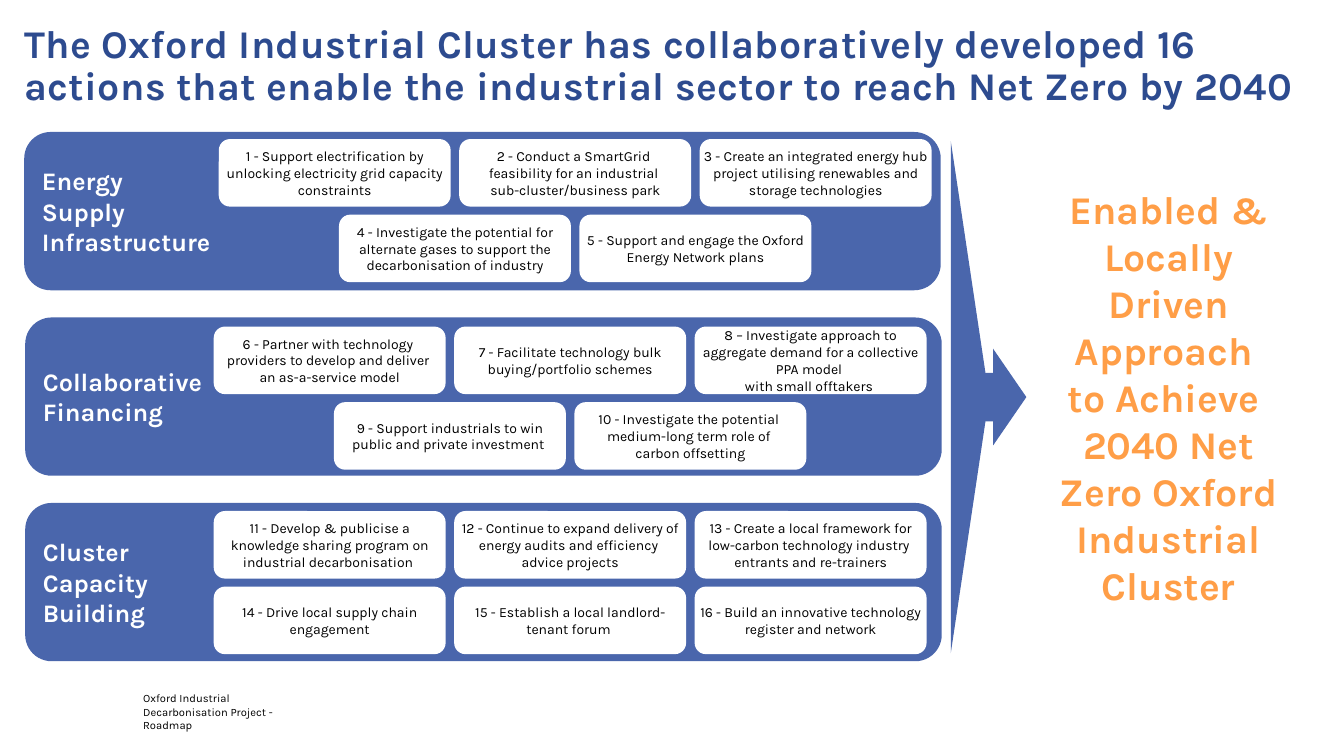
from pptx import Presentation
from pptx.dml.color import RGBColor
from pptx.enum.shapes import MSO_SHAPE
from pptx.enum.text import MSO_ANCHOR, MSO_AUTO_SIZE, PP_ALIGN
from pptx.util import Inches, Pt

HUES = {"navy": "2D4B8F", "blue": "4A66AC", "white": "FFFFFF",
        "black": "000000", "gold": "FF9E47"}

# Grid of the action cards, in inches
CARD_W, CARD_H = 2.3, 0.67
COL, ROW = 2.385, 0.75
BAND_W, BAND_H = 9.09, 1.57

# Each band: left, top, label, left and top of its cards, rows of cards
BANDS = [
    (0.24, 1.31, "Energy \nSupply \nInfrastructure", 2.17, 1.38, [
        ["1 - Support electrification by unlocking electricity grid capacity constraints",
         "2 - Conduct a SmartGrid \nfeasibility for an industrial \nsub-cluster/business park",
         "3 - Create an integrated energy hub project utilising renewables and storage technologies"],
        ["4 - Investigate the potential for alternate gases to support the decarbonisation of industry",
         "5 - Support and engage the Oxford Energy Network plans"]]),
    (0.25, 3.15, "Collaborative \nFinancing", 2.12, 3.24, [
        ["6 - Partner with technology \nproviders to develop and deliver \nan as-a-service model",
         "7 - Facilitate technology bulk buying/portfolio schemes",
         "8 – Investigate approach to aggregate demand for a collective PPA model \nwith small offtakers "],
        ["9 - Support industrials to win public and private investment ",
         "10 - Investigate the potential \nmedium-long term role of \ncarbon offsetting"]]),
    (0.25, 4.99, "Cluster \nCapacity \nBuilding", 2.12, 5.07, [
        ["11 - Develop & publicise a knowledge sharing program on industrial decarbonisation ",
         "12 - Continue to expand delivery of energy audits and efficiency \nadvice projects",
         "13 - Create a local framework for low-carbon technology industry \nentrants and re-trainers"],
        ["14 - Drive local supply chain engagement",
         "15 - Establish a local landlord-tenant forum ",
         "16 - Build an innovative technology register and network"]]),
]


def write(shape, text, size, hue, bold=False, align=PP_ALIGN.LEFT,
          anchor=MSO_ANCHOR.MIDDLE, inset=0):
    """Fill a shape with one paragraph, one run per line; return the runs."""
    frame = shape.text_frame
    frame.word_wrap = True
    frame.auto_size = MSO_AUTO_SIZE.NONE
    frame.vertical_anchor = anchor
    frame.margin_left = frame.margin_right = Inches(inset)
    frame.margin_top = frame.margin_bottom = Inches(inset / 2)
    para = frame.paragraphs[0]
    para.alignment = align
    for num, line in enumerate(text.split("\n")):
        if num:
            para.add_line_break()
        run = para.add_run()
        run.text = line
        run.font.name = "Karla"
        run.font.size = Pt(size)
        run.font.bold = bold
        run.font.color.rgb = RGBColor.from_string(HUES[hue])
    return para.runs


def draw(kind, left, top, width, height, hue):
    """Add a flat preset shape without outline."""
    shape = slide.shapes.add_shape(
        kind, Inches(left), Inches(top), Inches(width), Inches(height))
    shape.shadow.inherit = False
    shape.fill.solid()
    shape.fill.fore_color.rgb = RGBColor.from_string(HUES[hue])
    shape.line.fill.background()
    return shape


prs = Presentation()
prs.slide_width, prs.slide_height = Inches(13.33), Inches(7.5)
slide = prs.slides.add_slide(prs.slide_layouts[5])

# Title
title = slide.shapes.title
title.left, title.top = Inches(0.24), Inches(0.24)
title.width, title.height = Inches(12.86), Inches(0.79)
runs = write(title, "The Oxford Industrial Cluster has collaboratively developed 16 \n"
             "actions that enable the industrial sector to reach Net Zero by 2040",
             28, "navy", bold=True, anchor=MSO_ANCHOR.TOP)
title.text_frame.paragraphs[0].line_spacing = 0.9
for run in runs:
    run.font._element.set("spc", "30")

# Arrow from the bands to the outcome
draw(MSO_SHAPE.RIGHT_ARROW, 9.52, 3.46, 0.66, 0.96, "blue")
wedge = draw(MSO_SHAPE.ISOSCELES_TRIANGLE, 7.08, 3.75, 5.08, 0.38, "blue")
wedge.rotation = 90

# Bands with their cards; short rows are centred on three columns
for left, top, label, card_x, card_y, rows in BANDS:
    band = draw(MSO_SHAPE.ROUNDED_RECTANGLE, left, top, BAND_W, BAND_H, "blue")
    write(band, label, 18, "white", bold=True, inset=0.1)
    for r, row in enumerate(rows):
        start = card_x + (3 - len(row)) * COL / 2
        for c, text in enumerate(row):
            card = draw(MSO_SHAPE.ROUNDED_RECTANGLE, start + c * COL,
                        card_y + r * ROW, CARD_W, CARD_H, "white")
            write(card, text, 10, "black", align=PP_ALIGN.CENTER)

# Outcome
goal = draw(MSO_SHAPE.RECTANGLE, 10.26, 2.35, 2.66, 3.17, "white")
write(goal, "Enabled & Locally Driven Approach \nto Achieve \n"
      "2040 Net Zero Oxford Industrial Cluster",
      28, "gold", bold=True, align=PP_ALIGN.CENTER, inset=0.1)

# Footer
foot = slide.shapes.add_textbox(Inches(1.42), Inches(7), Inches(1.64), Inches(0.26))
write(foot, "Oxford Industrial Decarbonisation Project - Roadmap", 8, "black",
      anchor=MSO_ANCHOR.BOTTOM)

prs.save("out.pptx")
